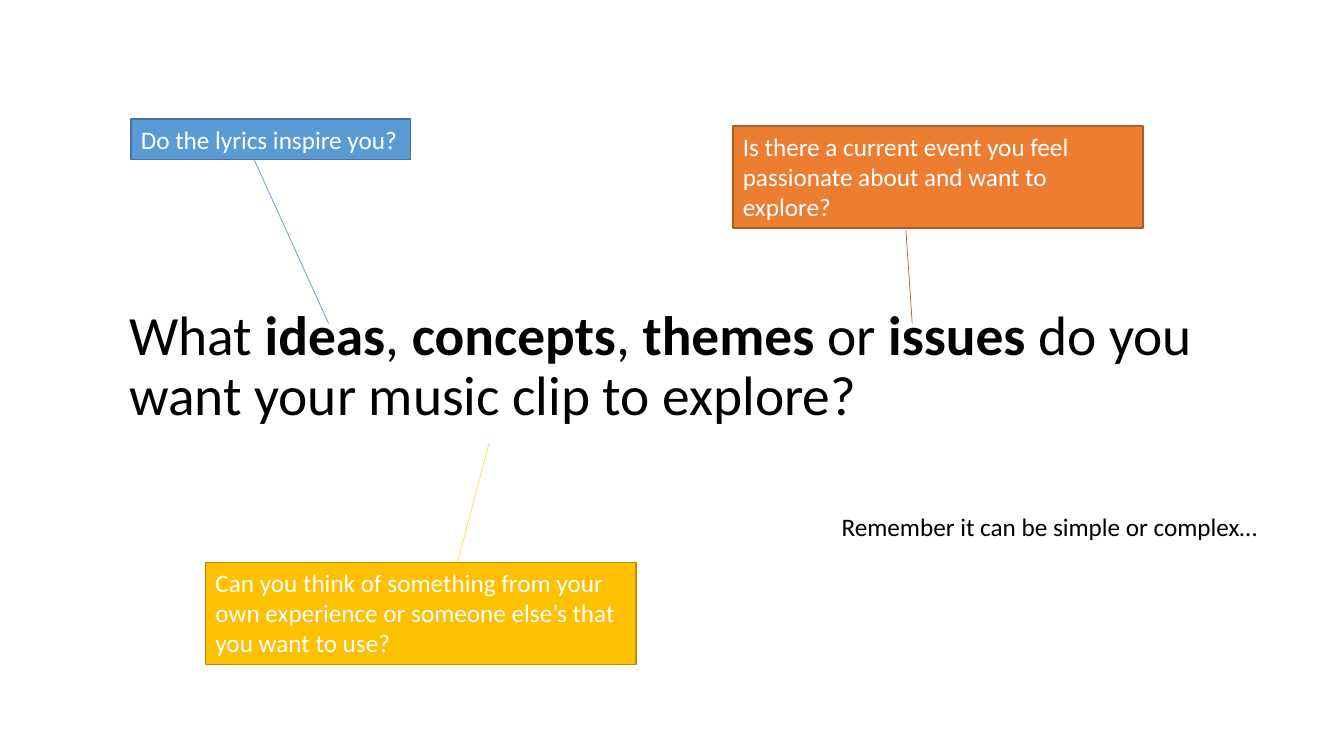
from dataclasses import dataclass

from lxml.etree import SubElement
from pptx import Presentation
from pptx.dml.color import RGBColor
from pptx.enum.shapes import MSO_CONNECTOR, MSO_SHAPE
from pptx.enum.text import MSO_ANCHOR, MSO_AUTO_SIZE, PP_ALIGN
from pptx.oxml.ns import qn
from pptx.slide import Slide
from pptx.text.text import TextFrame, _Paragraph
from pptx.util import Cm, Pt


@dataclass
class Prompt:
    text: str
    area: tuple[float, float, float, float]  # left, top, width, height in cm
    fill: str
    border: str
    pointer: tuple[float, float, float, float]  # from x, y to x, y in cm
    pointer_color: str
    wrap: bool = True


PROMPTS = [
    Prompt("Do the lyrics inspire you?", (3.3, 3, 7.04, 1.02),
           "5B9BD5", "43739E", (6.4, 4.01, 8.28, 8.15), "5B9BD5", wrap=False),
    Prompt("Is there a current event you feel passionate about and want to explore?",
           (18.47, 3.18, 10.34, 2.57),
           "ED7D31", "AF5C24", (22.83, 5.79, 22.99, 8.15), "C55A11"),
    Prompt("Can you think of something from your own experience or someone else’s "
           "that you want to use?", (5.18, 14.17, 10.85, 2.57),
           "FFC000", "BD8E00", (11.53, 14.17, 12.32, 11.18), "FFD966"),
]
QUESTION = [
    ("What ", False), ("ideas", True), (", ", False), ("concepts", True),
    (", ", False), ("themes", True), (" or ", False), ("issues", True),
    (" do you want your music clip to explore?", False),
]


def color(value: str) -> RGBColor:
    return RGBColor.from_string(value)


def write(para: _Paragraph, text: str, *, size: float = 18,
          ink: str = "000000", bold: bool = False) -> None:
    span = para.add_run()
    span.text = text
    span.font.name = "Calibri"
    span.font.size = Pt(size)
    span.font.bold = bold
    span.font.color.rgb = color(ink)


def fit_to_text(frame: TextFrame, wrap: bool) -> _Paragraph:
    """Let the box grow with its text and return its left-aligned paragraph."""
    frame.word_wrap = wrap
    frame.auto_size = MSO_AUTO_SIZE.SHAPE_TO_FIT_TEXT
    frame.vertical_anchor = MSO_ANCHOR.TOP
    para = frame.paragraphs[0]
    para.alignment = PP_ALIGN.LEFT
    return para


def add_question(page: Slide) -> None:
    title = page.shapes.title
    title.left, title.top, title.width, title.height = map(Cm, (3, 8.36, 29.21, 3.68))
    frame = title.text_frame
    frame.word_wrap = True
    frame.auto_size = MSO_AUTO_SIZE.NONE
    frame.vertical_anchor = MSO_ANCHOR.MIDDLE
    para = frame.paragraphs[0]
    para.alignment = PP_ALIGN.LEFT
    para.line_spacing = 0.9
    for text, bold in QUESTION:
        write(para, text, size=39.6, bold=bold)
    para.add_line_break()


def add_prompt(page: Slide, prompt: Prompt) -> None:
    box = page.shapes.add_shape(MSO_SHAPE.RECTANGLE, *map(Cm, prompt.area))
    box.shadow.inherit = False
    box.fill.solid()
    box.fill.fore_color.rgb = color(prompt.fill)
    box.line.color.rgb = color(prompt.border)
    box.line.width = Pt(1)
    write(fit_to_text(box.text_frame, prompt.wrap), prompt.text, ink="FFFFFF")

    pointer = page.shapes.add_connector(MSO_CONNECTOR.STRAIGHT, *map(Cm, prompt.pointer))
    pointer.line.color.rgb = color(prompt.pointer_color)
    pointer.line.width = Pt(0.5)
    SubElement(pointer._element.spPr, qn("a:effectLst"))


def add_reminder(page: Slide) -> None:
    box = page.shapes.add_textbox(*map(Cm, (20.96, 12.75, 11.15, 1.02)))
    write(fit_to_text(box.text_frame, wrap=False), "Remember it can be simple or complex…")


def main() -> None:
    deck = Presentation()
    deck.slide_width, deck.slide_height = Cm(33.87), Cm(19.05)
    page = deck.slides.add_slide(deck.slide_layouts.get_by_name("Title Only"))
    add_question(page)
    for prompt in PROMPTS:
        add_prompt(page, prompt)
    add_reminder(page)
    deck.save("out.pptx")


if __name__ == "__main__":
    main()
